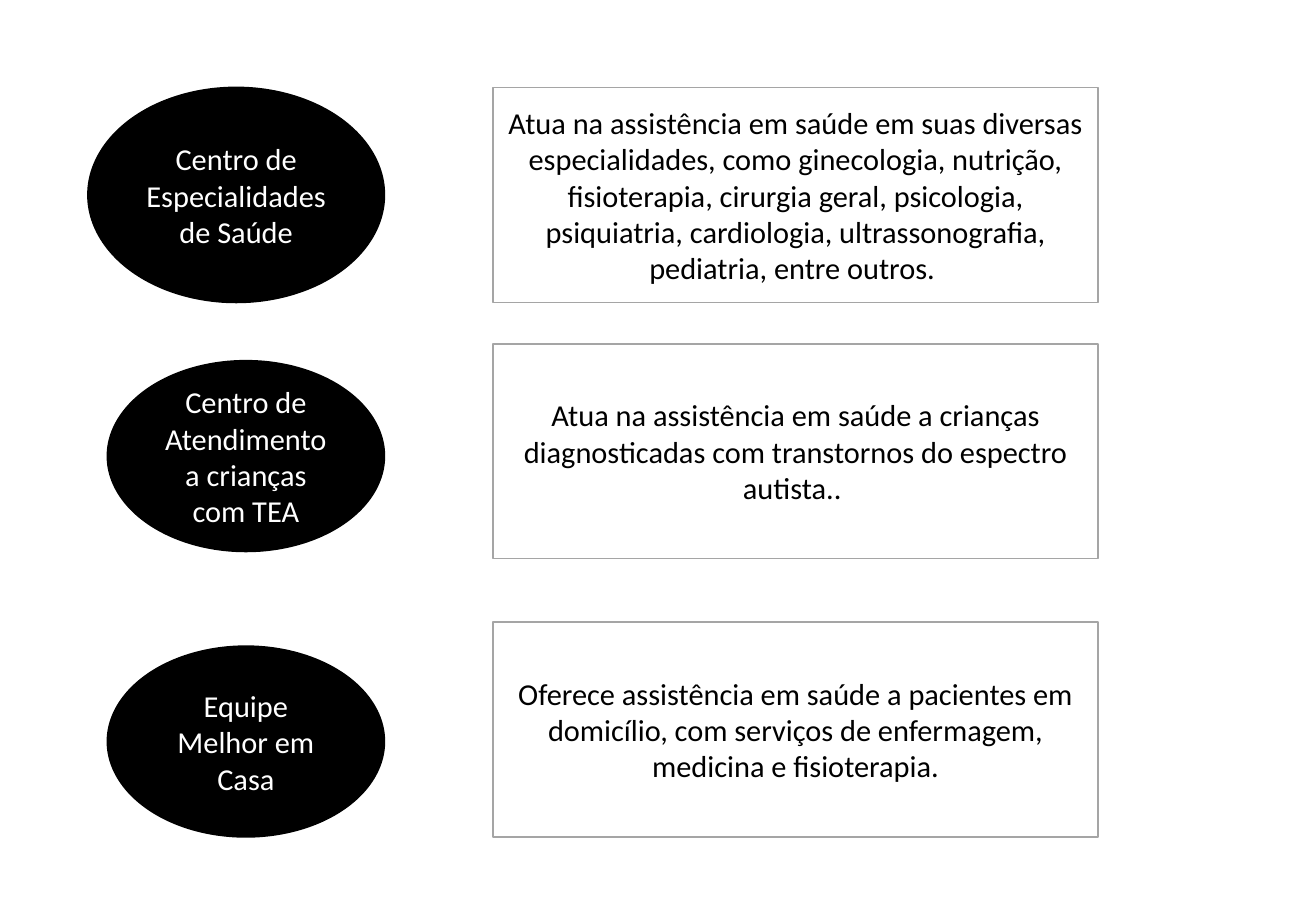
from pptx import Presentation
from pptx.dml.color import RGBColor
from pptx.enum.shapes import MSO_SHAPE
from pptx.enum.text import MSO_ANCHOR, PP_ALIGN
from pptx.util import Pt

ROW_LEFT, ROW_WIDTH, ROW_HEIGHT = 51.84, 599.04, 127.44
CARD_WIDTH = 358.56
OVAL_RIGHT = 176  # distance from the row's left edge

# Row top, oval offset from the row top, oval size, service, description
SERVICES = [
    (51.84, 0, (175.68, 127.44), "Centro de Especialidades de Saúde",
     "Atua na assistência em saúde em suas diversas especialidades, como "
     "ginecologia, nutrição, fisioterapia, cirurgia geral, psicologia, "
     "psiquiatria, cardiologia, ultrassonografia, pediatria, entre outros. "),
    (203.76, 10.08, (164.16, 113.04), "Centro de Atendimento a crianças com TEA",
     "Atua na assistência em saúde a crianças diagnosticadas com "
     "transtornos do espectro autista.. "),
    (368.64, 14.4, (164.16, 113.04), "Equipe Melhor em Casa",
     "Oferece assistência em saúde a pacientes em domicílio, com serviços "
     "de enfermagem, medicina e fisioterapia."),
]


def color(value):
    return RGBColor.from_string(value)


def add_label(slide, preset, box, text, fill, line, font_color):
    """Add a filled shape with centred text."""
    shape = slide.shapes.add_shape(preset, *[Pt(length) for length in box])
    shape.shadow.inherit = False
    shape.fill.solid()
    shape.fill.fore_color.rgb = color(fill)
    shape.line.color.rgb = color(line)
    shape.line.width = Pt(1)
    frame = shape.text_frame
    frame.word_wrap = True
    frame.vertical_anchor = MSO_ANCHOR.MIDDLE
    paragraph = frame.paragraphs[0]
    paragraph.alignment = PP_ALIGN.CENTER
    run = paragraph.add_run()
    run.text = text
    run.font.name = "Calibri"
    run.font.size = Pt(18)
    run.font.color.rgb = color(font_color)


def add_service_row(slide, box, oval_offset, oval_size, service, description):
    left, top, width, height = box
    # Service name, aligned on the right edge of the ovals
    oval_width, oval_height = oval_size
    oval_box = (left + OVAL_RIGHT - oval_width, top + oval_offset,
                oval_width, oval_height)
    add_label(slide, MSO_SHAPE.OVAL, oval_box, service,
              "000000", "000000", "FFFFFF")
    # Description, flush with the right edge of the row
    card_box = (left + width - CARD_WIDTH, top, CARD_WIDTH, height)
    add_label(slide, MSO_SHAPE.RECTANGLE, card_box, description,
              "FFFFFF", "A5A5A5", "000000")


def main():
    presentation = Presentation()
    presentation.slide_width = Pt(780)
    presentation.slide_height = Pt(540)
    slide = presentation.slides.add_slide(presentation.slide_layouts[6])
    for top, oval_offset, oval_size, service, description in SERVICES:
        add_service_row(slide, (ROW_LEFT, top, ROW_WIDTH, ROW_HEIGHT),
                        oval_offset, oval_size, service, description)
    presentation.save("out.pptx")


if __name__ == "__main__":
    main()
